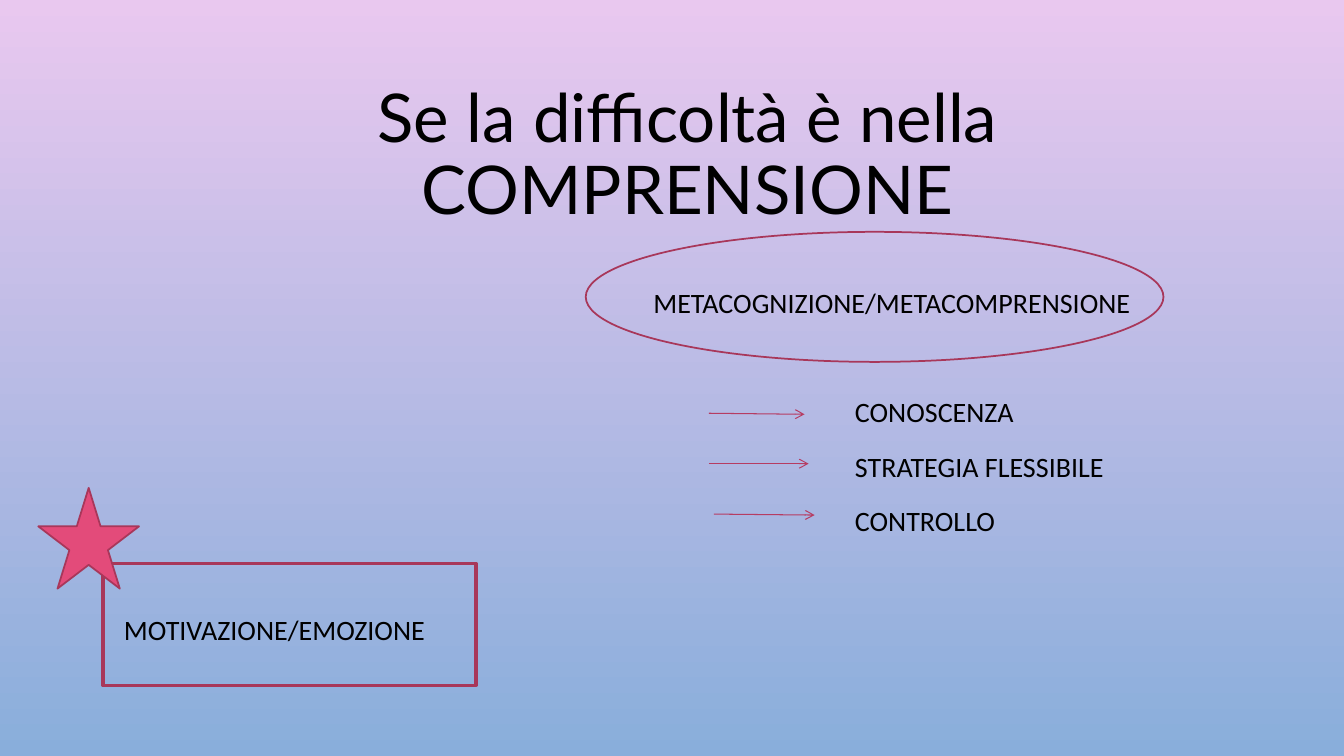
from dataclasses import dataclass

import pptx
import pptx.dml.color
import pptx.enum.shapes
import pptx.enum.text
import pptx.oxml
import pptx.oxml.ns
import pptx.util
from pptx.util import Inches

MSO_SHAPE = pptx.enum.shapes.MSO_SHAPE
PP_ALIGN = pptx.enum.text.PP_ALIGN
MSO_ANCHOR = pptx.enum.text.MSO_ANCHOR
BLACK, OUTLINE, ARROW, PINK = "000000", "A8375A", "B63C62", "E34B7A"


@dataclass
class Figure:
    kind: int
    left: float
    top: float
    width: float
    height: float
    line_pt: float
    fill: str = ""


@dataclass
class Label:
    left: float
    top: float
    width: float
    lines: list[str]


@dataclass
class Arrow:
    x1: float
    y1: float
    x2: float
    y2: float


FIGURES = [
    Figure(MSO_SHAPE.OVAL, 5.81, 2.3, 5.73, 1.29, 1.25),
    Figure(MSO_SHAPE.RECTANGLE, 1.02, 5.59, 3.7, 1.21, 2.5),
    Figure(MSO_SHAPE.STAR_5_POINT, 0.38, 4.84, 1, 1, 1.25, PINK),
]
LABELS = [
    Label(6.48, 2.77, 5, ["METACOGNIZIONE/METACOMPRENSIONE"]),
    Label(8.48, 3.85, 4, ["CONOSCENZA", "STRATEGIA FLESSIBILE", "CONTROLLO"]),
    Label(1.23, 6.01, 3.4, ["MOTIVAZIONE/EMOZIONE"]),
]
ARROWS = [
    Arrow(7.03, 4.1, 7.98, 4.11),
    Arrow(7.03, 4.6, 8.02, 4.6),
    Arrow(7.08, 5.1, 8.08, 5.11),
]


def rgb(value: str) -> pptx.dml.color.RGBColor:
    return pptx.dml.color.RGBColor.from_string(value)


def set_font(p, name: str, size: float) -> None:
    for r in p.runs:
        r.font.name = name
        r.font.size = pptx.util.Pt(size)
        r.font.color.rgb = rgb(BLACK)


def paint_background(slide) -> None:
    fill = slide.background.fill
    fill.gradient()
    fill.gradient_angle = 270
    for stop, color in zip(fill.gradient_stops, ("E9C8EF", "89AEDB")):
        stop.color.rgb = rgb(color)
    for stop, position in zip(fill.gradient_stops, (0, 1)):
        stop.position = position


def add_title(slide, text: str) -> None:
    sp = slide.shapes.add_textbox(Inches(1), Inches(0.68), Inches(11.64), Inches(1.75))
    tf = sp.text_frame
    tf.word_wrap = True
    tf.vertical_anchor = MSO_ANCHOR.MIDDLE
    tf.text = text
    p = tf.paragraphs[0]
    p.alignment = PP_ALIGN.CENTER
    p.line_spacing = 0.9
    set_font(p, "Lato", 48)


def add_label(slide, label: Label) -> None:
    height = 0.55 * len(label.lines)
    sp = slide.shapes.add_textbox(
        Inches(label.left), Inches(label.top), Inches(label.width), Inches(height))
    tf = sp.text_frame
    tf.word_wrap = True
    tf.margin_left = tf.margin_right = tf.margin_top = tf.margin_bottom = 0
    tf.text = "\n".join(label.lines)
    for i, p in enumerate(tf.paragraphs):
        p.line_spacing = 1.2
        p.space_before = pptx.util.Pt(10 if i else 0)
        set_font(p, "Calibri", 20)


def add_figure(slide, figure: Figure) -> None:
    sp = slide.shapes.add_shape(
        figure.kind, Inches(figure.left), Inches(figure.top),
        Inches(figure.width), Inches(figure.height))
    sp.shadow.inherit = False
    if figure.fill:
        sp.fill.solid()
        sp.fill.fore_color.rgb = rgb(figure.fill)
    else:
        sp.fill.background()
    sp.line.color.rgb = rgb(OUTLINE)
    sp.line.width = pptx.util.Pt(figure.line_pt)


def add_arrow(slide, arrow: Arrow) -> None:
    connector = slide.shapes.add_connector(
        pptx.enum.shapes.MSO_CONNECTOR.STRAIGHT,
        Inches(arrow.x1), Inches(arrow.y1), Inches(arrow.x2), Inches(arrow.y2))
    connector.line.color.rgb = rgb(ARROW)
    connector.line.width = pptx.util.Pt(0.75)
    ns = pptx.oxml.ns.nsdecls("a")
    ln = connector.line._get_or_add_ln()
    ln.append(pptx.oxml.parse_xml(f'<a:tailEnd {ns} type="arrow"/>'))
    connector._element.spPr.append(pptx.oxml.parse_xml(f"<a:effectLst {ns}/>"))


def main() -> None:
    prs = pptx.Presentation()
    prs.slide_width, prs.slide_height = Inches(13.33), Inches(7.5)
    slide = prs.slides.add_slide(prs.slide_layouts[6])
    paint_background(slide)
    for label in LABELS:
        add_label(slide, label)
    for arrow in ARROWS:
        add_arrow(slide, arrow)
    for figure in FIGURES:
        add_figure(slide, figure)
    add_title(slide, "Se la difficoltà è nella COMPRENSIONE")
    prs.save("out.pptx")


if __name__ == "__main__":
    main()
